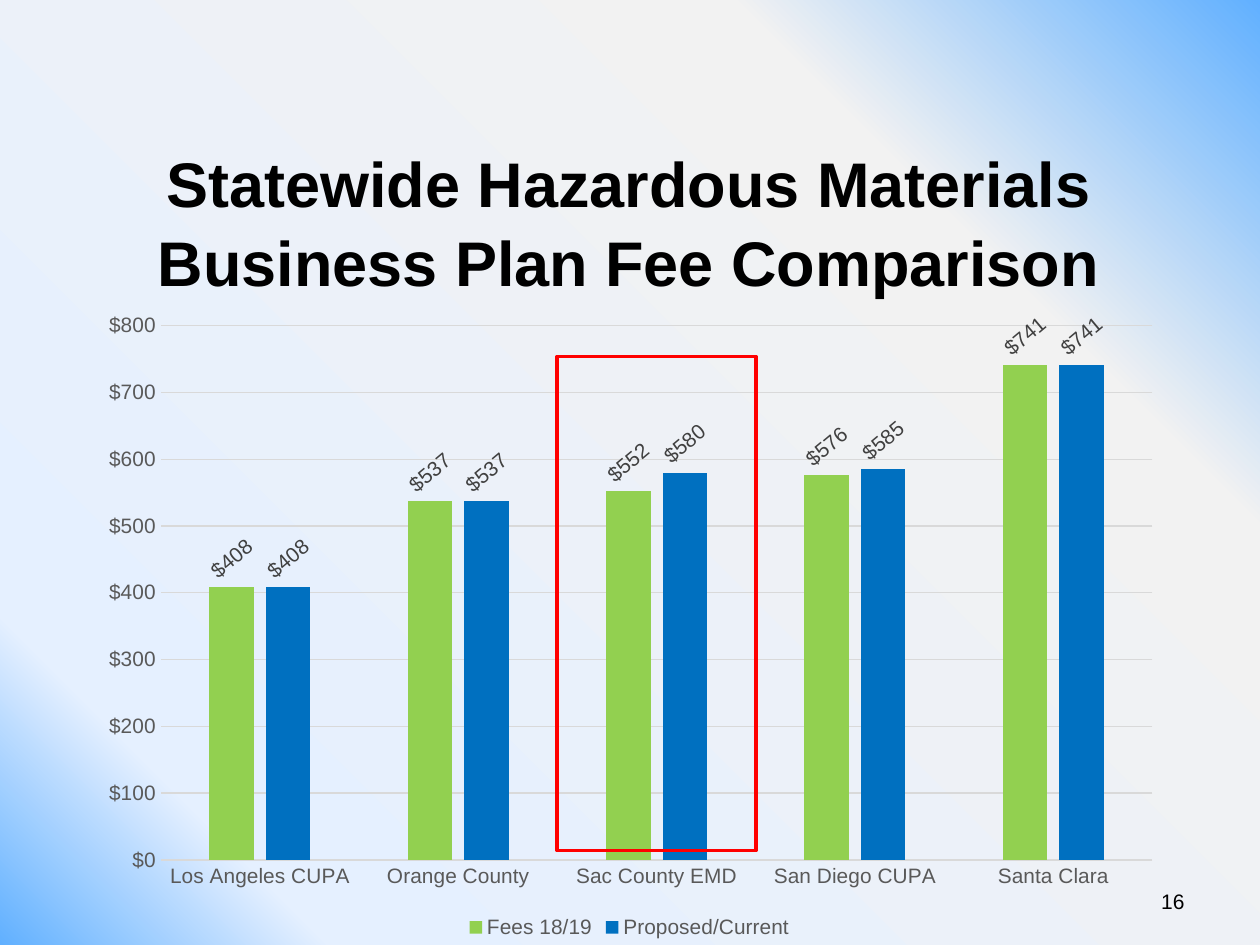
from dataclasses import dataclass

from lxml.etree import SubElement
from pptx import Presentation
from pptx.chart.data import CategoryChartData
from pptx.dml.color import RGBColor
from pptx.enum.chart import XL_CHART_TYPE, XL_LABEL_POSITION, XL_LEGEND_POSITION, XL_TICK_MARK
from pptx.enum.shapes import MSO_SHAPE
from pptx.enum.text import MSO_ANCHOR, PP_ALIGN
from pptx.oxml import parse_xml
from pptx.oxml.ns import nsdecls, qn
from pptx.util import Inches, Pt

SKY = RGBColor(0x61, 0xB0, 0xFF)
PALE = RGBColor(0xE5, 0xF0, 0xFF)
MIST = RGBColor(0xF2, 0xF2, 0xF2)
BLACK = RGBColor(0x00, 0x00, 0x00)
GRAY = RGBColor(0x59, 0x59, 0x59)
DARK = RGBColor(0x40, 0x40, 0x40)
RULE = RGBColor(0xD9, 0xD9, 0xD9)
GREEN = RGBColor(0x92, 0xD0, 0x50)
BLUE = RGBColor(0x00, 0x70, 0xC0)
RED = RGBColor(0xFF, 0x00, 0x00)

FONT = "Arial"
DOLLARS = '"$"#,##0'
CHART_PT = 11.9
WIDTH, HEIGHT = Inches(10), Inches(7.5)


@dataclass(frozen=True)
class Box:
    left: float
    top: float
    width: float
    height: float

    def emu(self) -> tuple[int, ...]:
        shares = (self.left, self.top, self.width, self.height)
        return tuple(int(v * side / 100) for v, side in zip(shares, (WIDTH, HEIGHT) * 2))


@dataclass(frozen=True)
class Label:
    text: str
    box: Box
    size: float
    align: PP_ALIGN
    anchor: MSO_ANCHOR = MSO_ANCHOR.TOP
    bold: bool = False
    spacing: float = 1.0


@dataclass(frozen=True)
class Fees:
    name: str
    values: tuple[int, ...]
    color: RGBColor


AGENCIES = ("Los Angeles CUPA", "Orange County", "Sac County EMD", "San Diego CUPA", "Santa Clara")
FEES = (
    Fees("Fees 18/19", (408, 537, 552, 576, 741), GREEN),
    Fees("Proposed/Current", (408, 537, 580, 585, 741), BLUE),
)
LABELS = (
    Label("Statewide Hazardous Materials Business Plan Fee Comparison", Box(4.9, 14.93, 90, 16.67),
          36, PP_ALIGN.CENTER, MSO_ANCHOR.MIDDLE, True, 1.05),
    Label("16", Box(71.7, 93.33, 23.3, 4.53), 12, PP_ALIGN.RIGHT),
)
CHART_BOX = Box(6.7, 31.73, 86.5, 68.13)
PLOT_SHARES = {"x": 0.07, "y": 0.04, "w": 0.91, "h": 0.83}
HIGHLIGHT_BOX = Box(44.2, 37.73, 15.8, 52.27)
BACKGROUND_STOPS = ((0, SKY), (15, PALE), (76, MIST), (100, SKY))


def set_font(font, size: float, color: RGBColor, bold: bool = False) -> None:
    font.name, font.size, font.bold = FONT, Pt(size), bold
    font.color.rgb = color


def paint_background(s) -> None:
    fill = s.background.fill
    fill.gradient()
    fill.gradient_angle = 45
    stops = s.element.find(".//" + qn("a:gsLst"))
    for stop in list(stops):
        stops.remove(stop)
    for share, color in BACKGROUND_STOPS:
        gs = SubElement(stops, qn("a:gs"), pos=str(share * 1000))
        SubElement(gs, qn("a:srgbClr"), val=str(color))


def add_label(s, label: Label) -> None:
    tf = s.shapes.add_textbox(*label.box.emu()).text_frame
    tf.word_wrap = True
    tf.vertical_anchor = label.anchor
    p = tf.paragraphs[0]
    p.text = label.text
    p.alignment = label.align
    p.line_spacing = label.spacing
    set_font(p.font, label.size, BLACK, label.bold)


def style_axis(axis) -> None:
    axis.major_tick_mark = axis.minor_tick_mark = XL_TICK_MARK.NONE
    set_font(axis.tick_labels.font, CHART_PT, GRAY)


def style_line(line, color: RGBColor, width: float) -> None:
    line.color.rgb = color
    line.width = Pt(width)


def style_series(series, color: RGBColor) -> None:
    series.format.fill.solid()
    series.format.fill.fore_color.rgb = color
    labels = series.data_labels
    labels.show_value = True
    labels.number_format, labels.number_format_is_linked = DOLLARS, False
    labels.position = XL_LABEL_POSITION.OUTSIDE_END
    set_font(labels.font, CHART_PT, DARK)
    body = labels._element.find(".//" + qn("a:bodyPr"))
    body.set("rot", str(-40 * 60000))
    body.set("vert", "horz")


def place_plot(chart) -> None:
    plot_area = chart._chartSpace.chart.plotArea
    for layout in plot_area.findall(qn("c:layout")):
        plot_area.remove(layout)
    modes = '<c:layoutTarget val="inner"/><c:xMode val="edge"/><c:yMode val="edge"/>'
    sides = "".join(f'<c:{k} val="{v}"/>' for k, v in PLOT_SHARES.items())
    plot_area.insert(0, parse_xml(
        f'<c:layout {nsdecls("c")}><c:manualLayout>{modes}{sides}</c:manualLayout></c:layout>'))


def add_fee_chart(s) -> None:
    data = CategoryChartData(number_format=DOLLARS)
    data.categories = AGENCIES
    for fees in FEES:
        data.add_series(fees.name, fees.values)
    chart = s.shapes.add_chart(XL_CHART_TYPE.COLUMN_CLUSTERED, *CHART_BOX.emu(), data).chart
    set_font(chart.font, 10, BLACK)
    chart.has_title = False
    chart.has_legend = True
    chart.legend.position = XL_LEGEND_POSITION.BOTTOM
    chart.legend.include_in_layout = False
    set_font(chart.legend.font, CHART_PT, GRAY)

    plot = chart.plots[0]
    plot.gap_width, plot.overlap, plot.vary_by_categories = 219, -27, False
    for series, fees in zip(plot.series, FEES):
        style_series(series, fees.color)

    style_axis(chart.category_axis)
    style_line(chart.category_axis.format.line, RULE, 0.75)
    axis = chart.value_axis
    style_axis(axis)
    axis.minimum_scale, axis.maximum_scale, axis.major_unit = 0, 800, 100
    axis.tick_labels.number_format = DOLLARS
    axis.tick_labels.number_format_is_linked = False
    axis.format.line.fill.background()
    style_line(axis.major_gridlines.format.line, RULE, 0.75)
    place_plot(chart)


def add_highlight(s) -> None:
    sp = s.shapes.add_shape(MSO_SHAPE.RECTANGLE, *HIGHLIGHT_BOX.emu())
    sp.shadow.inherit = False
    sp.fill.background()
    style_line(sp.line, RED, 2)


def main() -> None:
    prs = Presentation()
    prs.slide_width, prs.slide_height = WIDTH, HEIGHT
    s = prs.slides.add_slide(prs.slide_layouts[6])
    paint_background(s)
    for label in LABELS:
        add_label(s, label)
    add_fee_chart(s)
    add_highlight(s)
    prs.save("out.pptx")


if __name__ == "__main__":
    main()
